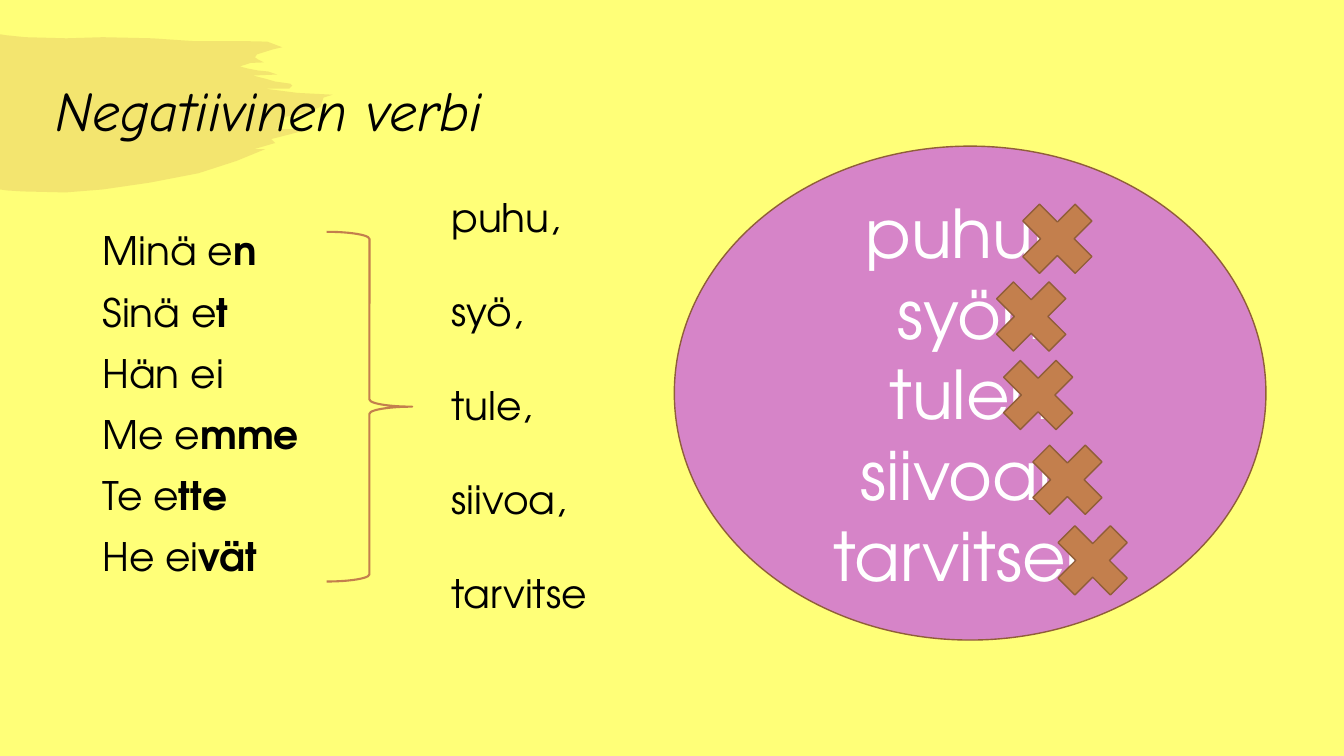
import pptx
import pptx.util
import pptx.dml.color
import pptx.enum.shapes
import pptx.enum.text

Pt = pptx.util.Pt
KIND = pptx.enum.shapes.MSO_SHAPE
ALIGN = pptx.enum.text.PP_ALIGN
ANCHOR = pptx.enum.text.MSO_ANCHOR

# Content: a bar parts each stem from its bold ending
TITLE = "Negatiivinen verbi"
FORMS = ["Minä e|n", "Sinä e|t", "Hän ei", "Me e|mme", "Te e|tte", "He ei|vät"]
STEMS = ["puhu,", "syö,", "tule,", "siivoa,", "tarvitse"]
VERBS = ["puhun", "syön", "tulen", "siivoan", "tarvitsen"]

# Left and top of the cross over each final n
CROSSES = [(719.3, 134.6), (700.6, 190.1), (705.6, 246.2),
           (726.5, 306.7), (744.5, 364.3)]
CROSS = 72

# Outline of the brush stroke
BRUSH = [
    (0, 24.5), (4.3, 25.2), (18, 26.6), (47.5, 27.4), (73.4, 26.6),
    (108.7, 27.4), (139.7, 29.5), (178.6, 29.5), (191, 29.8), (201.6, 33.8),
    (195.1, 35.3), (183.6, 38.9), (182.2, 41), (184.3, 42.5), (188.6, 44.6),
    (179, 45), (171.4, 47.5), (177.1, 49), (184.3, 50.4), (191.5, 51.1),
    (198, 53.3), (180.7, 54), (189.4, 56.2), (196.6, 58.3), (201.6, 59),
    (207.4, 59.8), (208.8, 61.2), (206.6, 63.4), (204.5, 63.4),
    (189.4, 63.4), (212.4, 66.4), (237.6, 67.7), (231.1, 69.8), (229, 76.3),
    (221, 79.9), (216, 81.4), (203.8, 83.5), (201.6, 86.4), (200.2, 90),
    (197.3, 92.2), (221.8, 92.2), (193.7, 99.4), (196.6, 102.2),
    (181.4, 106.6), (189.4, 106.6), (169, 115), (141.8, 123.8),
    (107, 130.5), (73.4, 135.4), (46.8, 137.5), (16.6, 136.8), (5, 136.1),
    (0, 135.4)]

SANS, HAND = "TeX Gyre Adventor", "Comic Neue"
YELLOW, SAND, BROWN, EDGE, PINK = "FFFF78", "F3E56F", "C37F4D", "905E39", "D684C8"
BLACK, WHITE = "000000", "FFFFFF"


def color(code):
    return pptx.dml.color.RGBColor.from_string(code)


def write(shape, lines, size=28, font=SANS, ink=BLACK, italic=False,
          align=ALIGN.LEFT, anchor=ANCHOR.TOP, after=0, pitch=None):
    frame = shape.text_frame
    frame.word_wrap = True
    frame.vertical_anchor = anchor
    for i, line in enumerate(lines):
        para = frame.paragraphs[0] if i == 0 else frame.add_paragraph()
        para.alignment = align
        para.space_after = Pt(after)
        if pitch:
            para.line_spacing = pitch
        for j, part in enumerate(line.split("|")):
            run = para.add_run()
            run.text = part
            run.font.size = Pt(size)
            run.font.name = font
            run.font.italic = italic
            run.font.bold = j == 1
            run.font.color.rgb = color(ink)


def paint(shape, fill=None, line=None, width=1):
    shape.shadow.inherit = False
    if fill:
        shape.fill.solid()
        shape.fill.fore_color.rgb = color(fill)
    else:
        shape.fill.background()
    if line:
        shape.line.color.rgb = color(line)
        shape.line.width = Pt(width)
    else:
        shape.line.fill.background()


def main():
    deck = pptx.Presentation()
    deck.slide_width, deck.slide_height = Pt(960), Pt(540)
    slide = deck.slides.add_slide(deck.slide_layouts[6])
    slide.background.fill.solid()
    slide.background.fill.fore_color.rgb = color(YELLOW)
    shapes = slide.shapes

    def place(kind, *box):
        return shapes.add_shape(kind, *map(Pt, box))

    def text(lines, *box, **style):
        write(shapes.add_textbox(*map(Pt, box)), lines, **style)

    # Brush stroke and title
    dots = [(Pt(x), Pt(y)) for x, y in BRUSH]
    pen = shapes.build_freeform(*dots[0], scale=1.0)
    pen.add_line_segments(dots[1:], close=True)
    paint(pen.convert_to_shape(), SAND)
    text([TITLE], 32.4, 28.8, 861.8, 104.4, size=40, font=HAND, italic=True,
         anchor=ANCHOR.MIDDLE, pitch=0.9)

    # Negative forms, brace and verb stems
    text(FORMS, 66.2, 158.4, 828, 327.6, after=10)
    paint(place(KIND.RIGHT_BRACE, 233.3, 165.6, 61.2, 249.8), line=BROWN, width=1.5)
    text(STEMS, 315.4, 134.6, 514.8, 312.5, after=33.6)

    # Verbs with the final n crossed out
    oval = place(KIND.OVAL, 481.7, 104.4, 422.6, 352.8)
    paint(oval, PINK, EDGE)
    write(oval, VERBS, size=48, ink=WHITE, align=ALIGN.CENTER, anchor=ANCHOR.MIDDLE)
    for x, y in CROSSES:
        paint(place(KIND.MATH_MULTIPLY, x, y, CROSS, CROSS), BROWN, EDGE)

    deck.save("out.pptx")


if __name__ == "__main__":
    main()
